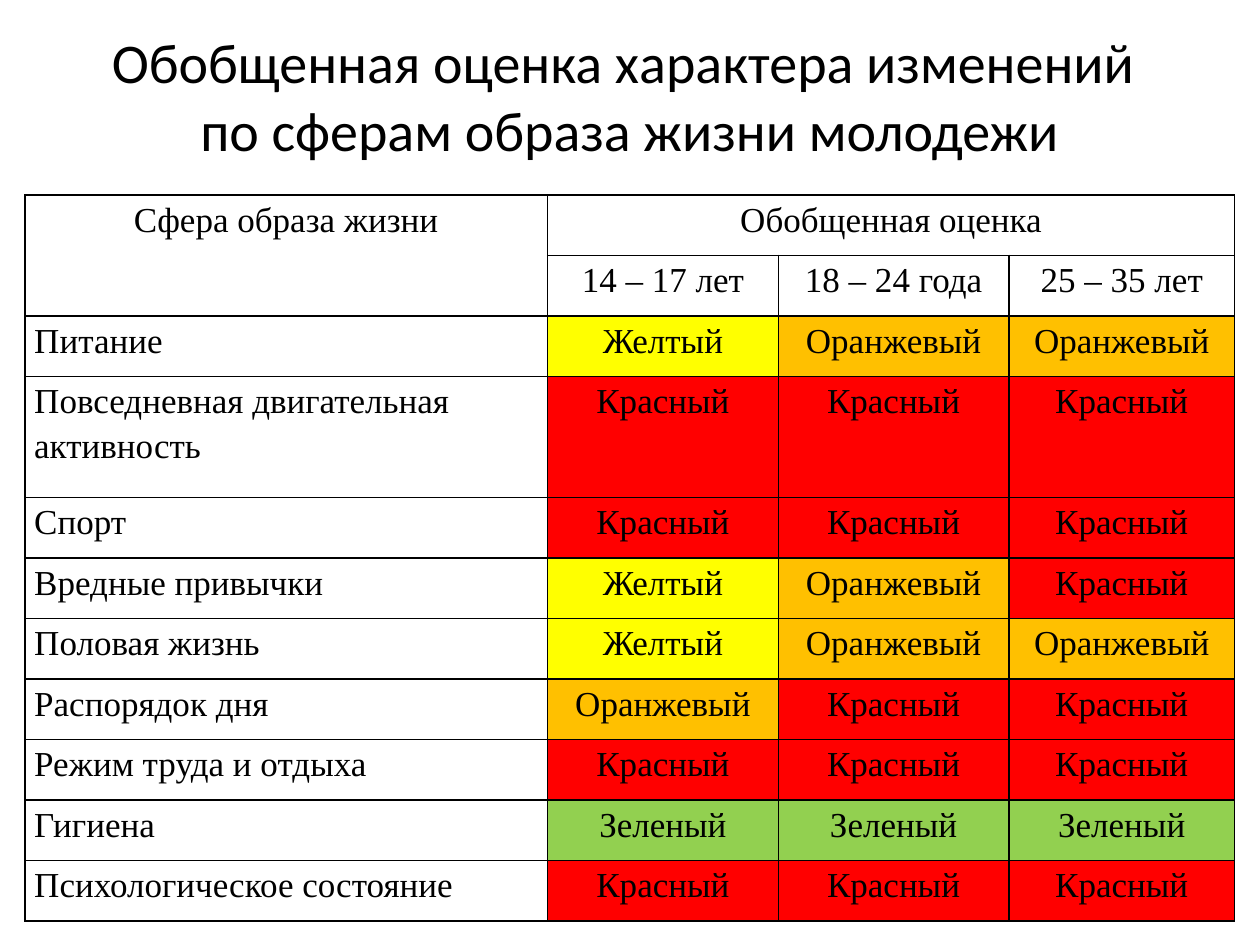
from dataclasses import dataclass

from lxml import etree
from pptx import Presentation
from pptx.dml.color import RGBColor
from pptx.enum import text
from pptx.oxml import ns
from pptx.table import Table, _Cell
from pptx.util import Cm, Pt

COLORS = {
    "text": "000000",
    "border": "000000",
    "Желтый": "FFFF00",
    "Оранжевый": "FFC000",
    "Красный": "FF0000",
    "Зеленый": "92D050",
}
COL_WIDTHS = [Cm(10.54), Cm(4.65), Cm(4.65), Cm(4.55)]
ROW_HEIGHT = Cm(1.22)
AGES = ["14 – 17 лет", "18 – 24 года", "25 – 35 лет"]


@dataclass
class Sphere:
    name: str
    ratings: list[str]
    lines: int = 1


Y, O, R, G = "Желтый", "Оранжевый", "Красный", "Зеленый"
SPHERES = [
    Sphere("Питание", [Y, O, O]),
    Sphere("Повседневная двигательная активность", [R, R, R], lines=2),
    Sphere("Спорт", [R, R, R]),
    Sphere("Вредные привычки", [Y, O, R]),
    Sphere("Половая жизнь", [Y, O, O]),
    Sphere("Распорядок дня", [O, R, R]),
    Sphere("Режим труда и отдыха", [R, R, R]),
    Sphere("Гигиена", [G, G, G]),
    Sphere("Психологическое состояние", [R, R, R]),
]


def style_font(font, name: str, size: int) -> None:
    font.name = name
    font.size = Pt(size)
    font.color.rgb = RGBColor.from_string(COLORS["text"])


def set_borders(cell: _Cell) -> None:
    """Outline a cell; borders must come before its fill in the XML."""
    tc_pr = cell._tc.get_or_add_tcPr()
    for i, side in enumerate(("lnL", "lnR", "lnT", "lnB")):
        ln = etree.Element(ns.qn(f"a:{side}"), w=str(Pt(1)))
        fill = etree.SubElement(ln, ns.qn("a:solidFill"))
        etree.SubElement(fill, ns.qn("a:srgbClr"), val=COLORS["border"])
        tc_pr.insert(i, ln)


def format_cell(cell: _Cell) -> None:
    cell.margin_left = cell.margin_right = Cm(0.19)
    cell.margin_top = cell.margin_bottom = 0
    cell.fill.background()
    set_borders(cell)


def write_cell(cell: _Cell, label: str, centred: bool = True) -> None:
    cell.text = label
    p = cell.text_frame.paragraphs[0]
    p.alignment = text.PP_ALIGN.CENTER if centred else text.PP_ALIGN.LEFT
    p.line_spacing = 1.15
    style_font(p.font, "Times New Roman", 20)
    if label in COLORS:
        cell.fill.solid()
        cell.fill.fore_color.rgb = RGBColor.from_string(COLORS[label])


def fill_table(table: Table) -> None:
    table.first_row = table.horz_banding = False
    for col, width in zip(table.columns, COL_WIDTHS):
        col.width = width
    for row in table.rows:
        row.height = ROW_HEIGHT
        for cell in row.cells:
            format_cell(cell)

    # Two-level header
    table.cell(0, 0).merge(table.cell(1, 0))
    table.cell(0, 1).merge(table.cell(0, len(AGES)))
    write_cell(table.cell(0, 0), "Сфера образа жизни")
    write_cell(table.cell(0, 1), "Обобщенная оценка")
    for c, age in enumerate(AGES, 1):
        write_cell(table.cell(1, c), age)

    # Ratings by sphere
    for r, sphere in enumerate(SPHERES, 2):
        table.rows[r].height = ROW_HEIGHT * sphere.lines
        write_cell(table.cell(r, 0), sphere.name, centred=False)
        for c, rating in enumerate(sphere.ratings, 1):
            write_cell(table.cell(r, c), rating)


def main() -> None:
    prs = Presentation()
    prs.slide_width, prs.slide_height = Cm(25.4), Cm(19.05)
    s = prs.slides.add_slide(prs.slide_layouts[5])

    # Title
    title = s.shapes.title
    title.left, title.top = Cm(1.27), Cm(0.33)
    title.width, title.height = Cm(22.86), Cm(3.17)
    tf = title.text_frame
    tf.text = "Обобщенная оценка характера изменений \vпо сферам образа жизни молодежи"
    tf.vertical_anchor = text.MSO_ANCHOR.MIDDLE
    p = tf.paragraphs[0]
    p.alignment = text.PP_ALIGN.CENTER
    style_font(p.font, "Calibri", 32)

    # Table
    rows = 2 + len(SPHERES)
    height = ROW_HEIGHT * (2 + sum(sphere.lines for sphere in SPHERES))
    frame = s.shapes.add_table(
        rows, len(COL_WIDTHS), Cm(0.5), Cm(3.93), sum(COL_WIDTHS), height
    )
    fill_table(frame.table)

    prs.save("out.pptx")


if __name__ == "__main__":
    main()
